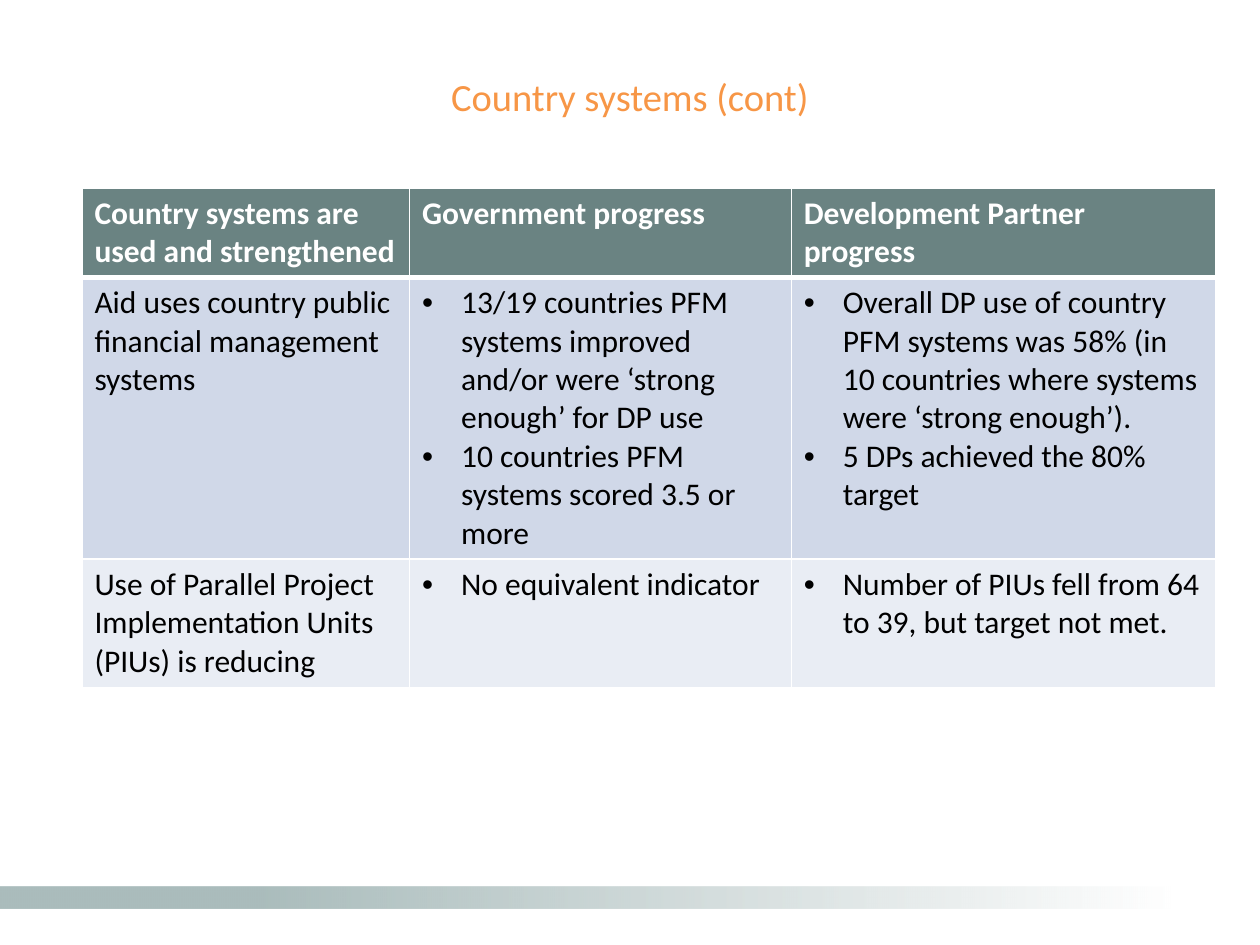
from dataclasses import dataclass

from lxml import etree
from pptx import Presentation
from pptx.dml.color import RGBColor
from pptx.enum.shapes import MSO_SHAPE
from pptx.enum.text import MSO_ANCHOR, PP_ALIGN
from pptx.oxml.ns import qn
from pptx.util import Emu, Inches, Pt

RECT = MSO_SHAPE.RECTANGLE
MIDDLE = MSO_ANCHOR.MIDDLE
CENTER = PP_ALIGN.CENTER

WHITE = RGBColor(0xFF, 0xFF, 0xFF)
BLACK = RGBColor(0, 0, 0)
ORANGE = RGBColor(0xF7, 0x96, 0x46)
TEAL = RGBColor(0x1A, 0x4B, 0x4A)
HEADER = RGBColor(0x6A, 0x83, 0x82)
BAND_DARK = RGBColor(0xD0, 0xD8, 0xE8)
BAND_LIGHT = RGBColor(0xE9, 0xED, 0xF4)

WIDTH, HEIGHT = Inches(10), Inches(7.5)
COLUMNS = (2.6, 3.03, 3.37)
BULLET_INDENT = Inches(0.31)
BAR_OPACITY = 37


@dataclass
class Row:
    height: float
    fill: RGBColor
    font: dict
    label: str
    government: tuple
    partners: tuple
    bulleted: bool = True
    bottom_line: float = 1


HEAD_FONT = {"name": "Calibri", "size": Pt(18), "bold": True}
BODY_FONT = {"name": "Calibri", "size": Pt(18), "bold": False}

ROWS = (
    Row(0.7, HEADER, HEAD_FONT, "Country systems are used and strengthened",
        ("Government progress",), ("Development Partner progress",),
        bulleted=False, bottom_line=3),
    Row(2.23, BAND_DARK, BODY_FONT,
        "Aid uses country public financial management systems",
        ("13/19 countries PFM systems improved and/or were ‘strong enough’ for DP use",
         "10 countries PFM systems scored 3.5 or more"),
        ("Overall DP use of country PFM systems was 58% "
         "(in 10 countries where systems were ‘strong enough’).",
         "5 DPs achieved the 80% target")),
    Row(1.02, BAND_LIGHT, BODY_FONT,
        "Use of Parallel Project Implementation Units (PIUs) is reducing",
        ("No equivalent indicator",),
        ("Number of PIUs fell from 64 to 39, but target not met.",)),
)


def set_font(font, values: dict, color: RGBColor) -> None:
    for name, value in values.items():
        setattr(font, name, value)
    font.color.rgb = color


def add_bullet(p) -> None:
    pPr = p._p.get_or_add_pPr()
    pPr.set("marL", str(BULLET_INDENT))
    pPr.set("indent", str(-BULLET_INDENT))
    etree.SubElement(pPr, qn("a:buFont"), typeface="Arial")
    etree.SubElement(pPr, qn("a:buChar"), char="•")


def add_borders(cell, top: float, bottom: float) -> None:
    tcPr = cell._tc.get_or_add_tcPr()
    widths = {"a:lnL": 1, "a:lnR": 1, "a:lnT": top, "a:lnB": bottom}
    for i, (tag, width) in enumerate(widths.items()):
        ln = etree.Element(qn(tag), w=str(Pt(width)))
        fill = etree.SubElement(ln, qn("a:solidFill"))
        etree.SubElement(fill, qn("a:srgbClr"), val=str(WHITE))
        tcPr.insert(i, ln)


def fill_cell(cell, row: Row, lines: tuple, bulleted: bool, top: float) -> None:
    cell.fill.solid()
    cell.fill.fore_color.rgb = row.fill
    add_borders(cell, top, row.bottom_line)
    tf = cell.text_frame
    for i, line in enumerate(lines):
        p = tf.add_paragraph() if i else tf.paragraphs[0]
        if bulleted:
            add_bullet(p)
        r = p.add_run()
        r.text = line
        set_font(r.font, row.font, WHITE if row.fill == HEADER else BLACK)


def add_bar(s) -> None:
    sp = s.shapes.add_shape(RECT, 0, Emu(int(HEIGHT * 0.9387)),
                            Emu(int(WIDTH * 0.929)), Inches(0.17))
    sp.shadow.inherit = False
    sp.line.fill.background()
    sp.fill.gradient()
    sp.fill.gradient_angle = 0
    stops = sp.fill.gradient_stops
    for stop, position, color in zip(stops, (0.22, 1), (TEAL, WHITE)):
        stop.position = position
        stop.color.rgb = color
    for clr in sp._element.spPr.iter(qn("a:srgbClr")):
        etree.SubElement(clr, qn("a:alpha"), val=str(BAR_OPACITY * 1000))


def add_progress_table(s) -> None:
    table = s.shapes.add_table(
        len(ROWS), len(COLUMNS), Inches(0.65), Inches(1.49),
        Inches(sum(COLUMNS)), Inches(sum(row.height for row in ROWS))).table
    for column, width in zip(table.columns, COLUMNS):
        column.width = Inches(width)
    top = 1
    for i, row in enumerate(ROWS):
        table.rows[i].height = Inches(row.height)
        for j, lines in enumerate(((row.label,), row.government, row.partners)):
            fill_cell(table.cell(i, j), row, lines, row.bulleted and j > 0, top)
        top = row.bottom_line


def set_title(s, text: str) -> None:
    sp = s.shapes.title
    frame = {"left": Inches(0.5), "top": Inches(0.3),
             "width": Inches(9), "height": Inches(1.25)}
    for name, value in frame.items():
        setattr(sp, name, value)
    tf = sp.text_frame
    tf.vertical_anchor = MIDDLE
    tf.margin_bottom = Inches(0.38)
    p = tf.paragraphs[0]
    p.alignment = CENTER
    r = p.add_run()
    r.text = text
    set_font(r.font, {"name": "Calibri", "size": Pt(22)}, ORANGE)


def main() -> None:
    prs = Presentation()
    prs.slide_width, prs.slide_height = WIDTH, HEIGHT
    s = prs.slides.add_slide(prs.slide_layouts[5])
    add_bar(s)
    add_progress_table(s)
    set_title(s, "Country systems (cont)")
    prs.save("out.pptx")


if __name__ == "__main__":
    main()
